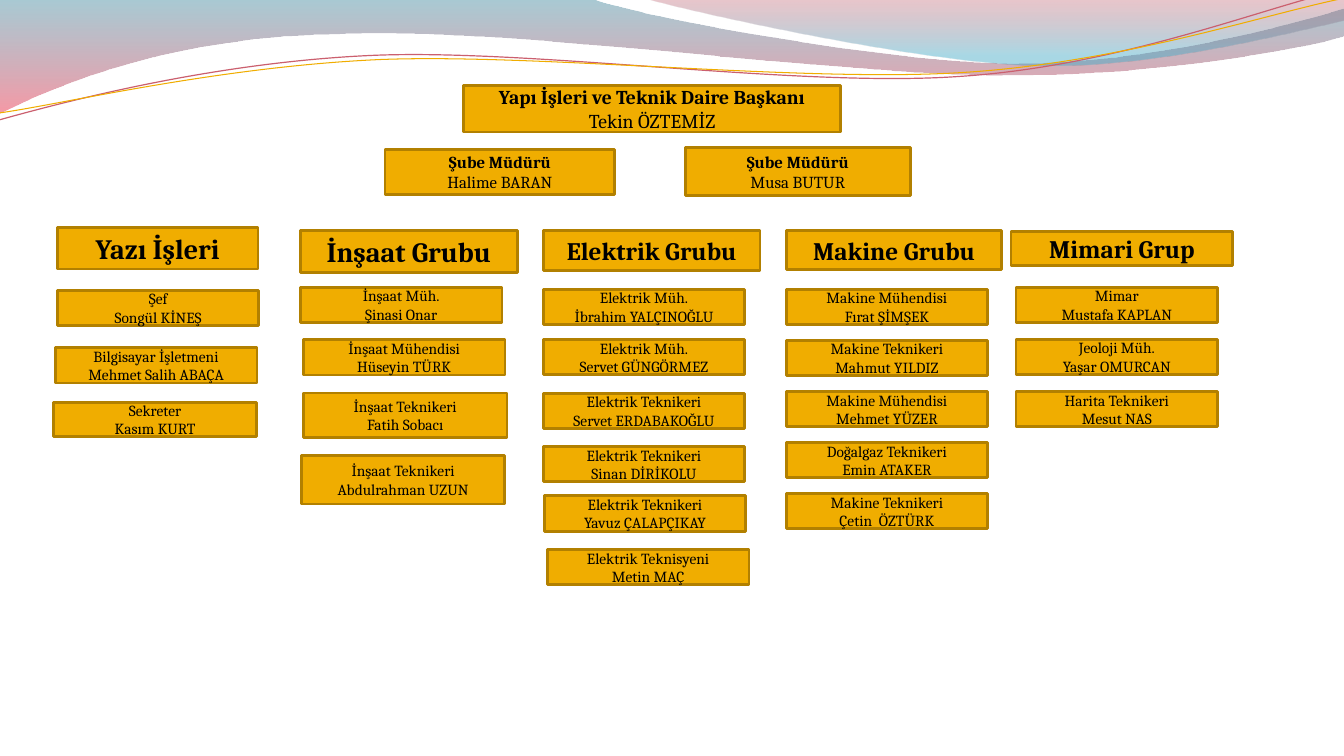
from dataclasses import dataclass

from lxml.etree import SubElement
from pptx import Presentation
from pptx.dml.color import RGBColor
from pptx.enum.shapes import MSO_SHAPE
from pptx.enum.text import MSO_ANCHOR, PP_ALIGN
from pptx.oxml.ns import qn
from pptx.util import Pt


@dataclass(frozen=True)
class Theme:
    font: str = "Cambria"
    ink: str = "000000"
    gold: str = "F0AD00"
    bronze: str = "B28000"
    rose: str = "CB5F6E"
    wide_wave: tuple = ((0, "3F8A9F", 45), (1, "EF445B", 55))
    right_wave: tuple = ((0, "B84253", 30), (0.8, "42ABC7", 45))
    chief_size: int = 14
    manager_size: int = 12
    staff_size: int = 11


@dataclass(frozen=True)
class Box:
    left: float
    top: float
    width: float
    height: float

    def inside(self, left, top, width, height):
        return Box(self.left + left, self.top + top, width, height)


@dataclass(frozen=True)
class Staff:
    role: str
    name: str
    shift: float = 0
    drop: float = 0
    width: float = 144
    height: float = 25.2


@dataclass(frozen=True)
class Group:
    title: str
    size: int
    box: Box
    first: float
    step: float
    staff: tuple
    indent: float = 0


THEME = Theme()

WIDE_WAVE = [
    [(0, 0)], [(422.6, -0.7)],
    [(456.5, 12.2), (637.2, 45.4), (727.9, 45.4)],
    [(819.4, 45.4), (920.2, 18.7), (959.8, 6.5)],
    [(961.2, 25.9)],
    [(943.9, 31.7), (835.2, 54.7), (715.7, 54)],
    [(596.9, 54), (366.5, 20.2), (247, 24.5)],
    [(123.1, 25.9), (43.9, 59.8), (-0.7, 81.4)],
]
RIGHT_WAVE = [
    [(460.1, -0.7)],
    [(488.9, 7.9), (654.5, 44.6), (738, 46.8)],
    [(821.5, 49.7), (923, 23), (959.8, 15.1)],
    [(959.8, 0)],
]
ROSE_LINE = [
    [(-0.7, 85.7)],
    [(46.1, 72.7), (151.9, 44.6), (265.7, 39.6)],
    [(379.4, 34.6), (568.8, 62.6), (684, 54.7)],
    [(799.2, 47.5), (901.4, 5.8), (958.3, -7.2)],
]
GOLD_LINE = [
    [(0, 80.6)],
    [(45.4, 74.2), (157, 47.5), (272.2, 42.5)],
    [(386.6, 38.2), (573.1, 59), (687.6, 51.8)],
    [(802.8, 44.6), (903.6, 10.1), (960.5, -1.4)],
]

GROUPS = [
    Group("Yazı İşleri", 20, Box(41, 162.7, 143.3, 29.5), 44.7, 40, (
        Staff("Şef", "Songül KİNEŞ"),
        Staff("Bilgisayar İşletmeni", "Mehmet Salih ABAÇA", -1.4, 1),
        Staff("Sekreter", "Kasım KURT", -2.9, 0, 145.4, 24.5),
    )),
    Group("İnşaat Grubu", 20, Box(214.6, 164.9, 154.8, 29.5), 40.3, 37.5, (
        Staff("İnşaat Müh.", "Şinasi Onar"),
        Staff("İnşaat Mühendisi", "Hüseyin TÜRK", 2.2),
        Staff("İnşaat Teknikeri", "Fatih Sobacı", 2.2, 0.6, 145.4, 31.7),
        Staff("İnşaat Teknikeri", "Abdulrahman UZUN", 0.7, 7.7, 145.4, 34.6),
    )),
    Group("Elektrik Grubu", 18, Box(388.1, 164.9, 154.8, 28.1), 41.7, 37.2, (
        Staff("Elektrik Müh.", "İbrahim YALÇINOĞLU"),
        Staff("Elektrik Müh.", "Servet GÜNGÖRMEZ", 0, -1.2),
        Staff("Elektrik Teknikeri", "Servet ERDABAKOĞLU"),
        Staff("Elektrik Teknikeri", "Sinan DİRİKOLU", 0, 0.8),
        Staff("Elektrik Teknikeri", "Yavuz ÇALAPÇIKAY", 0.7, -1.2),
        Staff("Elektrik Teknisyeni", "Metin MAÇ", 2.9),
    )),
    Group("Makine Grubu", 18, Box(561.6, 164.9, 154.1, 27.4), 41.7, 36.5, (
        Staff("Makine Mühendisi", "Fırat ŞİMŞEK"),
        Staff("Makine Teknikeri", "Mahmut YILDIZ"),
        Staff("Makine Mühendisi", "Mehmet YÜZER"),
        Staff("Doğalgaz Teknikeri", "Emin ATAKER"),
        Staff("Makine Teknikeri", "Çetin  ÖZTÜRK"),
    )),
    Group("Mimari Grup", 18, Box(722.2, 165.6, 158.4, 23.8), 39.6, 37.2, (
        Staff("Mimar", "Mustafa KAPLAN"),
        Staff("Jeoloji Müh.", "Yaşar OMURCAN"),
        Staff("Harita Teknikeri", "Mesut NAS"),
    ), 3.6),
]


def add_curve(page, box, segments, closed):
    points = [
        (Pt(box.left + x), Pt(box.top + y)) for segment in segments for x, y in segment
    ]
    builder = page.shapes.build_freeform(*points[0], scale=1.0)
    builder.add_line_segments(points[1:], close=closed)
    shape = builder.convert_to_shape()
    shape.shadow.inherit = False
    steps = iter(list(shape.element.iter(qn("a:lnTo"))))
    for segment in segments[1:]:
        corners = [next(steps) for point in segment]
        if len(corners) == 3:
            bezier = corners[0].makeelement(qn("a:cubicBezTo"))
            corners[0].addprevious(bezier)
            for corner in corners:
                bezier.append(corner[0])
                corner.getparent().remove(corner)
    return shape


def add_wave(page, box, segments, stops):
    shape = add_curve(page, box, segments, True)
    shape.line.fill.background()
    shape.fill.gradient()
    shape.fill.gradient_angle = 270
    elements = shape.element.iter(qn("a:gs"))
    for stop, element, (position, color, opacity) in zip(
        shape.fill.gradient_stops, elements, stops
    ):
        stop.position = position
        stop.color.rgb = RGBColor.from_string(color)
        SubElement(element[0], qn("a:alpha"), val=str(opacity * 1000))


def add_ribbon(page, box, segments, color, weight):
    shape = add_curve(page, box, segments, False)
    shape.fill.background()
    shape.line.color.rgb = RGBColor.from_string(color)
    shape.line.width = Pt(weight)


def draw_header(page, box):
    add_wave(page, box, WIDE_WAVE, THEME.wide_wave)
    add_wave(page, box, RIGHT_WAVE, THEME.right_wave)
    add_ribbon(page, box, ROSE_LINE, THEME.rose, 0.85)
    add_ribbon(page, box, GOLD_LINE, THEME.gold, 0.75)


def add_card(page, box, lines, size, bold_first=False):
    shape = page.shapes.add_shape(
        MSO_SHAPE.RECTANGLE, Pt(box.left), Pt(box.top), Pt(box.width), Pt(box.height)
    )
    shape.shadow.inherit = False
    shape.fill.solid()
    shape.fill.fore_color.rgb = RGBColor.from_string(THEME.gold)
    shape.line.color.rgb = RGBColor.from_string(THEME.bronze)
    shape.line.width = Pt(2)
    frame = shape.text_frame
    frame.word_wrap = True
    frame.vertical_anchor = MSO_ANCHOR.MIDDLE
    frame.text = "\n".join(lines)
    for index, para in enumerate(frame.paragraphs):
        para.alignment = PP_ALIGN.CENTER
        for span in para.runs:
            span.font.name = THEME.font
            span.font.size = Pt(size)
            span.font.bold = bold_first and index == 0
            span.font.color.rgb = RGBColor.from_string(THEME.ink)


def draw_leaders(page, box):
    chief = ("Yapı İşleri ve Teknik Daire Başkanı", "Tekin ÖZTEMİZ")
    add_card(page, box.inside(56.2, 0, 269.3, 33.1), chief, THEME.chief_size, True)
    for name, place in (
        ("Halime BARAN", box.inside(0, 45.4, 164.2, 32.4)),
        ("Musa BUTUR", box.inside(214.6, 43.9, 160.6, 34.6)),
    ):
        add_card(page, place, ("Şube Müdürü", name), THEME.manager_size, True)


def draw_group(page, box, group):
    add_card(page, box, (group.title,), group.size, True)
    for row, person in enumerate(group.staff):
        place = box.inside(
            group.indent + person.shift,
            group.first + row * group.step + person.drop,
            person.width,
            person.height,
        )
        add_card(page, place, (person.role, person.name), THEME.staff_size)


def main():
    deck = Presentation()
    deck.slide_width, deck.slide_height = Pt(960), Pt(540)
    page = deck.slides.add_slide(deck.slide_layouts[6])
    draw_header(page, Box(0, 0, 960, 86))
    draw_leaders(page, Box(275, 61.2, 375.2, 78.5))
    for group in GROUPS:
        draw_group(page, group.box, group)
    deck.save("out.pptx")


if __name__ == "__main__":
    main()
